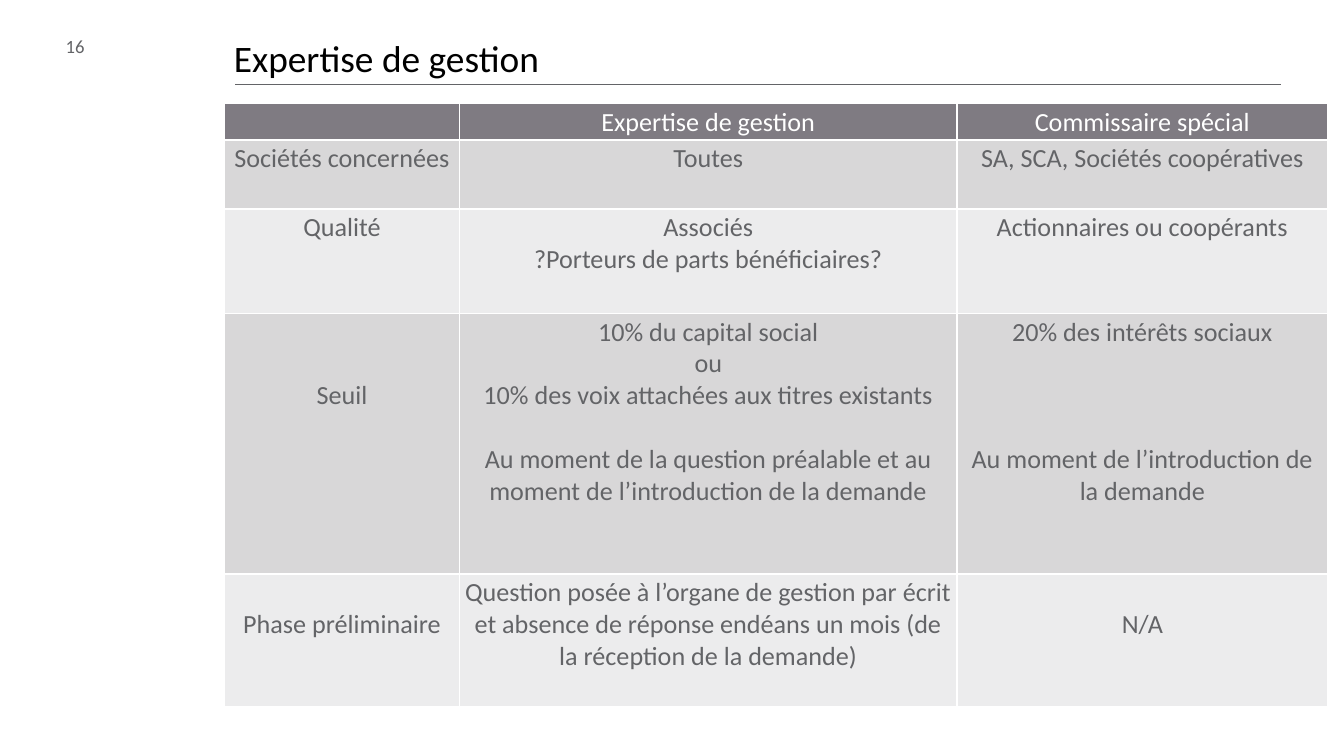
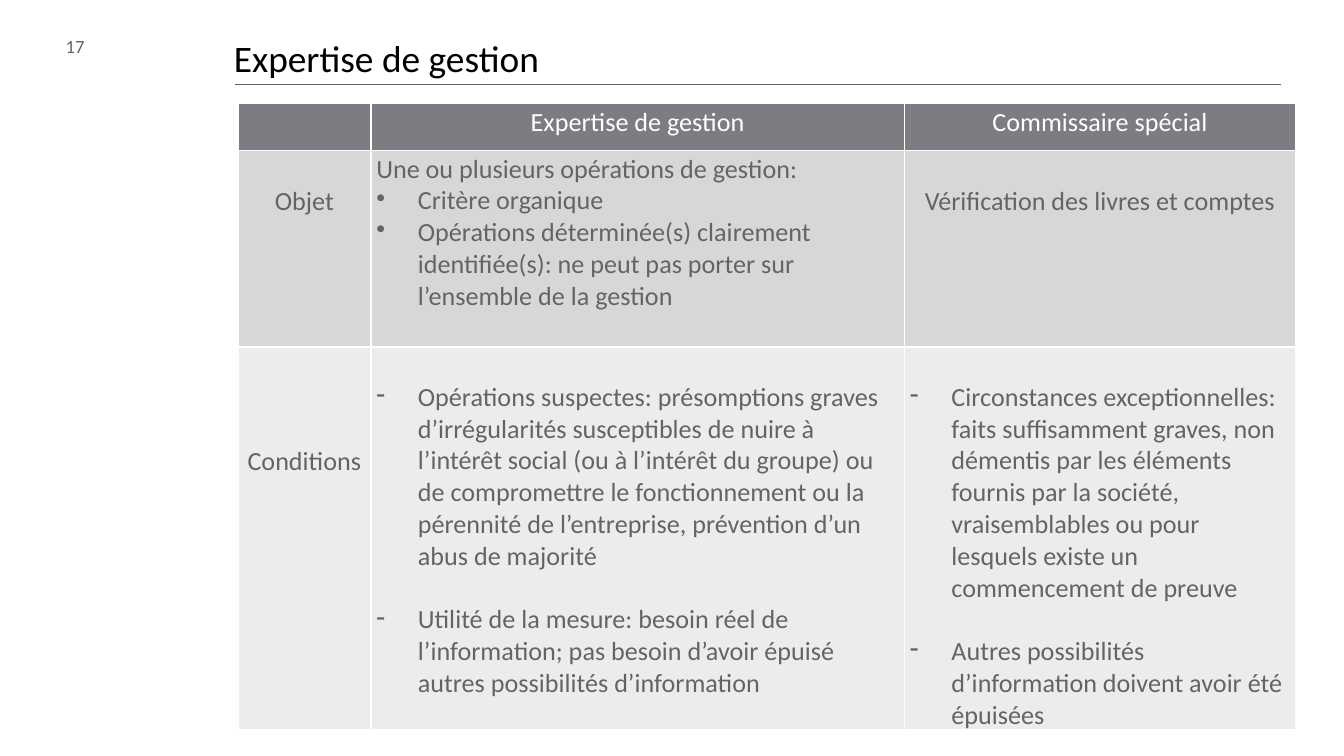
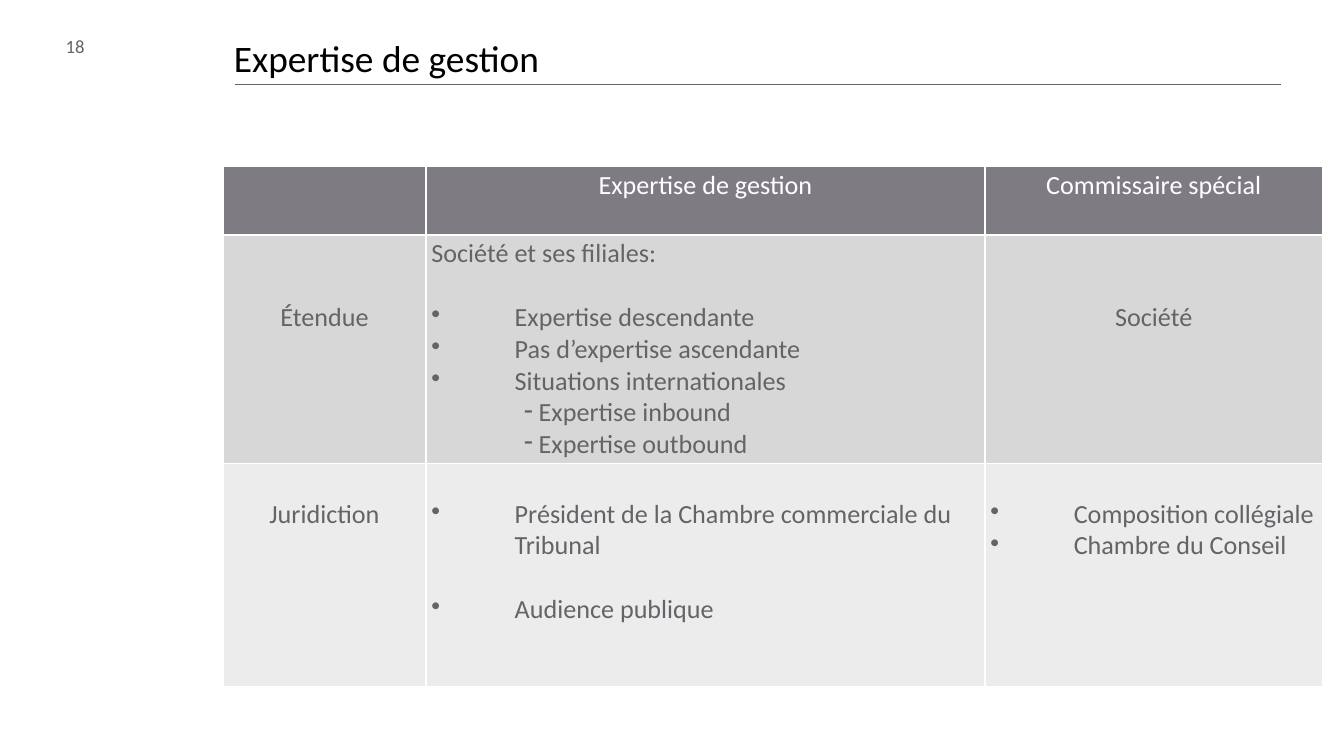
import pptx
import pptx.util
import pptx.dml.color
import pptx.enum.shapes
import pptx.enum.text
import pptx.oxml.ns
import lxml.etree

Inches = pptx.util.Inches
Pt = pptx.util.Pt
RGBColor = pptx.dml.color.RGBColor
qn = pptx.oxml.ns.qn
ALIGN = pptx.enum.text.PP_ALIGN

# Shared look
BLACK = RGBColor(0x00, 0x00, 0x00)
WHITE = RGBColor(0xFF, 0xFF, 0xFF)
GREY = RGBColor(0x63, 0x64, 0x67)
HEAD = RGBColor(0x7F, 0x7B, 0x82)
BANDS = [RGBColor(0xD8, 0xD7, 0xD8), RGBColor(0xEC, 0xEC, 0xED)]
FONT = "Calibri"
SIZE = 14  # table text
LINE = 17.1  # points from one text line to the next
WIDTH = 10
FIRST = 16  # number of the first page

# Paragraph styles: alignment, left margin, first indent, bullet
MID = (ALIGN.CENTER, 0, 0, None)
LEFT = (ALIGN.LEFT, 0, 0, None)
DOT = (ALIGN.LEFT, 0.31, -0.31, "•")
DASH = (ALIGN.LEFT, 0.31, -0.31, "-")
WIDE = (ALIGN.LEFT, 0.62, -0.62, "•")
SUB = (ALIGN.LEFT, 0.62, 0.07, "-")

# Content: a cell is a list of (lines left free above, style, text)
TITLE = "Expertise de gestion"
HEADS = ["", "Expertise de gestion", "Commissaire spécial"]
PAGES = [
    {
        "at": (1.67, 0.77),
        "cols": [1.75, 3.7, 2.76],
        "rows": [0.27, 0.51, 0.78, 1.94, 0.99],
        "body": [
            [[(0, MID, "Sociétés concernées")],
             [(0, MID, "Toutes")],
             [(0, MID, "SA, SCA, Sociétés coopératives")]],
            [[(0, MID, "Qualité")],
             [(0, MID, "Associés"),
              (0, MID, "?Porteurs de parts bénéficiaires?")],
             [(0, MID, "Actionnaires ou coopérants")]],
            [[(2, MID, "Seuil")],
             [(0, MID, "10% du capital social"),
              (0, MID, "ou"),
              (0, MID, "10% des voix attachées aux titres existants"),
              (1, MID, "Au moment de la question préalable et au moment "
                       "de l’introduction de la demande")],
             [(0, MID, "20% des intérêts sociaux"),
              (3, MID, "Au moment de l’introduction de la demande")]],
            [[(1, MID, "Phase préliminaire")],
             [(0, MID, "Question posée à l’organe de gestion par écrit et "
                       "absence de réponse endéans un mois (de la réception "
                       "de la demande)")],
             [(1, MID, "N/A")]],
        ],
    },
    {
        "at": (1.77, 0.77),
        "cols": [0.99, 3.97, 2.91],
        "rows": [0.35, 1.46, 2.68],
        "body": [
            [[(1, MID, "Objet")],
             [(0, LEFT, "Une ou plusieurs opérations de gestion:"),
              (0, DOT, "Critère organique"),
              (0, DOT, "Opérations déterminée(s) clairement identifiée(s): "
                       "ne peut pas porter sur l’ensemble de la gestion")],
             [(1, MID, "Vérification des livres et comptes")]],
            [[(3, MID, "Conditions")],
             [(1, DASH, "Opérations suspectes: présomptions graves "
                        "d’irrégularités susceptibles de nuire à l’intérêt "
                        "social (ou à l’intérêt du groupe) ou de "
                        "compromettre le fonctionnement ou la pérennité de "
                        "l’entreprise, prévention d’un abus de majorité"),
              (1, DASH, "Utilité de la mesure: besoin réel de "
                        "l’information; pas besoin d’avoir épuisé autres "
                        "possibilités d’information")],
             [(1, DASH, "Circonstances exceptionnelles: faits suffisamment "
                        "graves, non démentis par les éléments fournis par "
                        "la société, vraisemblables ou pour lesquels existe "
                        "un commencement de preuve"),
              (1, DASH, "Autres possibilités d’information doivent avoir "
                        "été épuisées")]],
        ],
    },
    {
        "at": (1.66, 1.24),
        "cols": [1.51, 4.16, 2.51],
        "rows": [0.51, 1.7, 1.66],
        "body": [
            [[(2, MID, "Étendue")],
             [(0, LEFT, "Société et ses filiales:"),
              (1, WIDE, "Expertise descendante"),
              (0, WIDE, "Pas d’expertise ascendante"),
              (0, WIDE, "Situations internationales"),
              (0, SUB, " Expertise inbound"),
              (0, SUB, " Expertise outbound")],
             [(2, MID, "Société")]],
            [[(1, MID, "Juridiction")],
             [(1, WIDE, "Président de la Chambre commerciale du Tribunal"),
              (1, WIDE, "Audience publique")],
             [(1, WIDE, "Composition collégiale"),
              (0, WIDE, "Chambre du Conseil")]],
        ],
    },
]


def style(para, size, color):
    para.font.name = FONT
    para.font.size = Pt(size)
    para.font.color.rgb = color


def edge(cell):
    """Draw white borders."""
    props = cell._tc.get_or_add_tcPr()
    for side in "LRTB":
        line = lxml.etree.SubElement(props, qn("a:ln" + side), w=str(Pt(1)))
        fill = lxml.etree.SubElement(line, qn("a:solidFill"))
        lxml.etree.SubElement(fill, qn("a:srgbClr"), val=str(WHITE))


def fill_cell(cell, paras, back, color):
    edge(cell)
    cell.fill.solid()
    cell.fill.fore_color.rgb = back
    cell.margin_left = cell.margin_right = Inches(0.04)
    cell.margin_bottom = Inches(0.02)
    cell.margin_top = Inches(0.02) + Pt(paras[0][0] * LINE)
    frame = cell.text_frame
    for i, (gap, (align, left, indent, mark), text) in enumerate(paras):
        para = frame.add_paragraph() if i else frame.paragraphs[0]
        para.alignment = align
        if i and gap:
            para.space_before = Pt(gap * LINE)
        if mark:
            props = para._p.get_or_add_pPr()
            props.set("marL", str(Inches(left)))
            props.set("indent", str(Inches(indent)))
            lxml.etree.SubElement(props, qn("a:buChar"), char=mark)
        style(para, SIZE, color)
        if text:
            run = para.add_run()
            run.text = text
            if mark:  # the bullet takes its size from the run
                run.font.size = Pt(SIZE)
        else:
            lxml.etree.SubElement(
                para._p, qn("a:endParaRPr"), sz=str(SIZE * 100))


def add_frame(slide, number):
    """Title, rule and page number."""
    title = slide.shapes.title
    title.left, title.top = Inches(1.64), Inches(0.21)
    title.width, title.height = Inches(7.89), Inches(0.44)
    title.text_frame.text = TITLE
    title.text_frame.auto_size = pptx.enum.text.MSO_AUTO_SIZE.SHAPE_TO_FIT_TEXT
    para = title.text_frame.paragraphs[0]
    para.alignment = ALIGN.LEFT
    style(para, 20, BLACK)

    rule = slide.shapes.add_connector(
        pptx.enum.shapes.MSO_CONNECTOR.STRAIGHT,
        Inches(1.75), Inches(0.63), Inches(9.53), Inches(0.63))
    rule.line.color.rgb = GREY
    rule.line.width = Pt(0.75)
    lxml.etree.SubElement(rule._element.spPr, qn("a:effectLst"))

    box = slide.shapes.add_textbox(
        Inches(0.39), Inches(0.21), Inches(0.39), Inches(0.39))
    box.text_frame.word_wrap = True
    box.text_frame.text = str(number)
    style(box.text_frame.paragraphs[0], 10, GREY)


def add_grid(slide, page):
    cols, rows = page["cols"], page["rows"]
    left, top = page["at"]
    grid = slide.shapes.add_table(
        len(rows), len(cols), Inches(left), Inches(top),
        Inches(sum(cols)), Inches(sum(rows))).table
    grid.horz_banding = False
    for col, width in zip(grid.columns, cols):
        col.width = Inches(width)
    for row, height in zip(grid.rows, rows):
        row.height = Inches(height)
    for c, text in enumerate(HEADS):
        fill_cell(grid.cell(0, c), [(0, MID, text)], HEAD, WHITE)
    for r, line in enumerate(page["body"]):
        for c, paras in enumerate(line):
            fill_cell(grid.cell(r + 1, c), paras, BANDS[r % 2], GREY)


def main():
    deck = pptx.Presentation()
    deck.slide_width = Inches(WIDTH)
    deck.slide_height = Inches(WIDTH * 9 / 16)
    for number, page in enumerate(PAGES, FIRST):
        slide = deck.slides.add_slide(deck.slide_layouts[5])
        add_frame(slide, number)
        add_grid(slide, page)
    deck.save("out.pptx")


if __name__ == "__main__":
    main()
